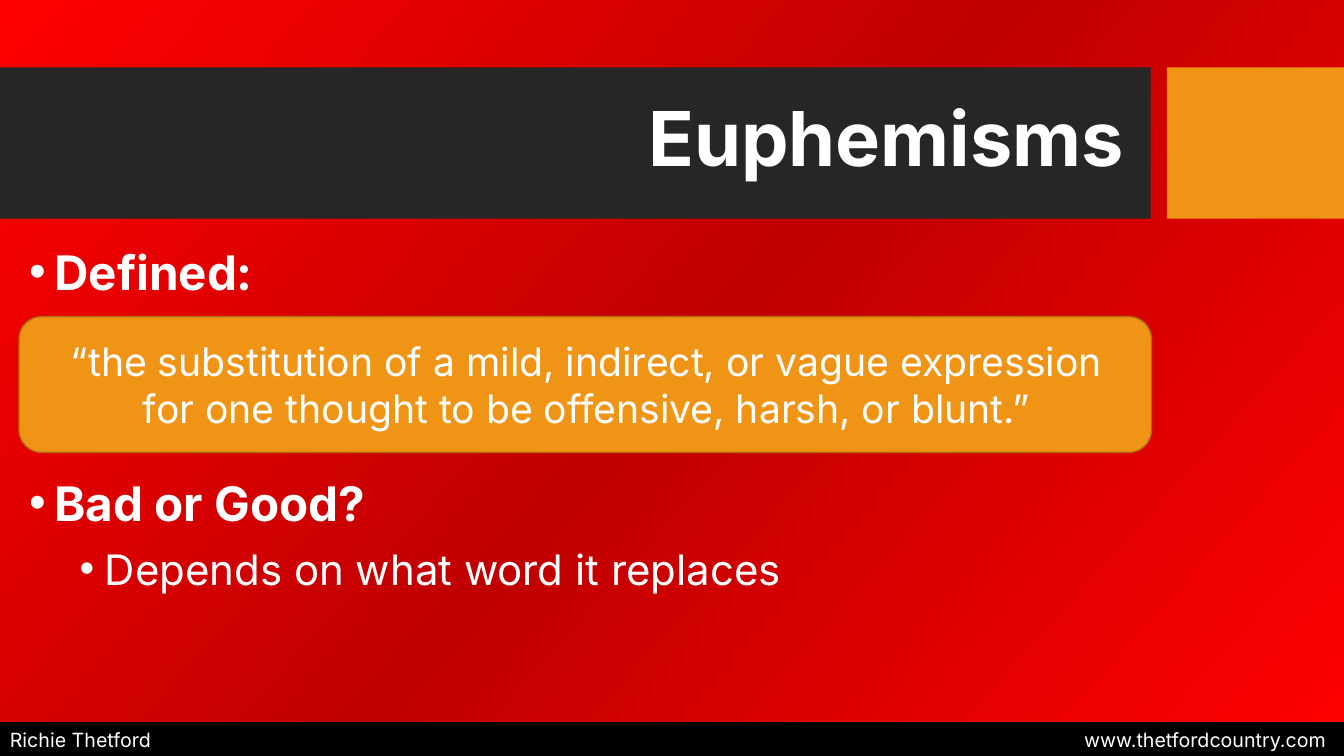
import copy
from dataclasses import dataclass
from typing import Optional

import pptx
import pptx.dml.color
import pptx.enum.shapes
import pptx.enum.text
import pptx.oxml
import pptx.oxml.ns
import pptx.util
from lxml import etree

Cm = pptx.util.Cm
Pt = pptx.util.Pt
Form = pptx.enum.shapes.MSO_SHAPE
Align = pptx.enum.text.PP_ALIGN
Anchor = pptx.enum.text.MSO_ANCHOR
qn = pptx.oxml.ns.qn

FONT = "Inter"
WIDE, HIGH = 33.87, 19.05
HUES = {
    "red": "FF0000",
    "deep": "C00000",
    "dark": "262626",
    "gold": "F09415",
    "edge": "B26D10",
    "black": "000000",
    "white": "FFFFFF",
}


@dataclass
class Box:
    left: float
    top: float
    width: float
    height: float
    fill: str = ""
    form: int = Form.RECTANGLE
    line: Optional[str] = None


@dataclass
class Point:
    text: str
    size: int
    bold: bool
    level: int
    margin: float
    before: float


BARS = [
    Box(0, 1.7, 29, 3.81, "dark"),
    Box(29.41, 1.7, 4.46, 3.81, "gold"),
]
FOOT = Box(0, 18.2, WIDE, 0.86, "black")
PILL = Box(0.48, 7.98, 28.54, 3.42, "gold", Form.ROUNDED_RECTANGLE, "edge")
QUOTE = Box(0.53, 8.38, 28.5, 2.64)
TITLE = Box(1.88, 1.7, 26.7, 3.78)
BODY = Box(0.48, 5.84, 32.84, 12.19)

# The wide space before the second point leaves room for the quote
POINTS = [
    Point("Defined:", 34, True, 0, 0.64, 0),
    Point("Bad or Good?", 34, True, 0, 0.64, 120.5),
    Point("Depends on what word it replaces", 30, False, 1, 1.91, 5),
]
LINES = [
    "“the substitution of a mild, indirect, or vague expression",
    "for one thought to be offensive, harsh, or blunt.”",
]


def hue(name: str) -> pptx.dml.color.RGBColor:
    return pptx.dml.color.RGBColor.from_string(HUES[name])


def area(box: Box) -> tuple:
    return Cm(box.left), Cm(box.top), Cm(box.width), Cm(box.height)


def draw(slide, box: Box):
    shape = slide.shapes.add_shape(box.form, *area(box))
    shape.shadow.inherit = False
    shape.fill.solid()
    shape.fill.fore_color.rgb = hue(box.fill)
    if box.line:
        shape.line.color.rgb = hue(box.line)
        shape.line.width = Pt(1)
    else:
        shape.line.fill.background()
    return shape


def place(slide, shape, box: Box) -> None:
    """Move a placeholder to its box and in front of what is drawn."""
    shape.left, shape.top, shape.width, shape.height = area(box)
    shape.text_frame.auto_size = pptx.enum.text.MSO_AUTO_SIZE.NONE
    slide.shapes.element.append(shape.element)


def write(para, text: str, size: int, bold: bool = False) -> None:
    run = para.add_run()
    run.text = text
    run.font.name = FONT
    run.font.size = Pt(size)
    run.font.bold = bold
    run.font.color.rgb = hue("white")


def paint(slide) -> None:
    fill = slide.background.fill
    fill.gradient()
    fill.gradient_angle = 318
    stops = slide.element.find(".//" + qn("a:gsLst"))
    while len(stops) < 3:
        stops.append(copy.deepcopy(stops[0]))
    for stop, spot, name in zip(
        fill.gradient_stops, (0, 0.5, 1), ("red", "deep", "red")
    ):
        stop.position = spot
        stop.color.rgb = hue(name)


def list_points(frame) -> None:
    for num, point in enumerate(POINTS):
        para = frame.add_paragraph() if num else frame.paragraphs[0]
        para.level = point.level
        props = para._p.get_or_add_pPr()
        props.set("marL", str(Cm(point.margin)))
        props.set("indent", str(-Cm(0.64)))
        etree.SubElement(props, qn("a:buChar")).set("char", "•")
        para.alignment = Align.LEFT
        para.line_spacing = 1.1
        para.space_before = Pt(point.before)
        write(para, point.text, point.size, point.bold)


def main() -> None:
    deck = pptx.Presentation()
    deck.slide_width, deck.slide_height = Cm(WIDE), Cm(HIGH)
    slide = deck.slides.add_slide(deck.slide_layouts[1])
    title, body = slide.placeholders
    paint(slide)

    # Header bars
    for bar in BARS:
        draw(slide, bar)

    # Bullet list
    place(slide, body, BODY)
    body.text_frame.vertical_anchor = Anchor.TOP
    list_points(body.text_frame)

    # Footer with a right tab for the address
    frame = draw(slide, FOOT).text_frame
    frame.vertical_anchor = Anchor.MIDDLE
    para = frame.paragraphs[0]
    tabs = etree.SubElement(para._p.get_or_add_pPr(), qn("a:tabLst"))
    tab = etree.SubElement(tabs, qn("a:tab"))
    tab.set("pos", str(Cm(33.17)))
    tab.set("algn", "r")
    para.alignment = Align.LEFT
    write(para, "Richie Thetford\twww.thetfordcountry.com", 14)

    # Title
    place(slide, title, TITLE)
    title.text_frame.vertical_anchor = Anchor.MIDDLE
    para = title.text_frame.paragraphs[0]
    para.alignment = Align.RIGHT
    para.line_spacing = 0.9
    write(para, "Euphemisms", 54, True)

    # Quote on its panel
    draw(slide, PILL)
    frame = slide.shapes.add_textbox(*area(QUOTE)).text_frame
    frame.word_wrap = True
    para = frame.paragraphs[0]
    para.alignment = Align.CENTER
    for num, line in enumerate(LINES):
        if num:
            para.add_line_break()
        write(para, line, 28)

    deck.save("out.pptx")


if __name__ == "__main__":
    main()
